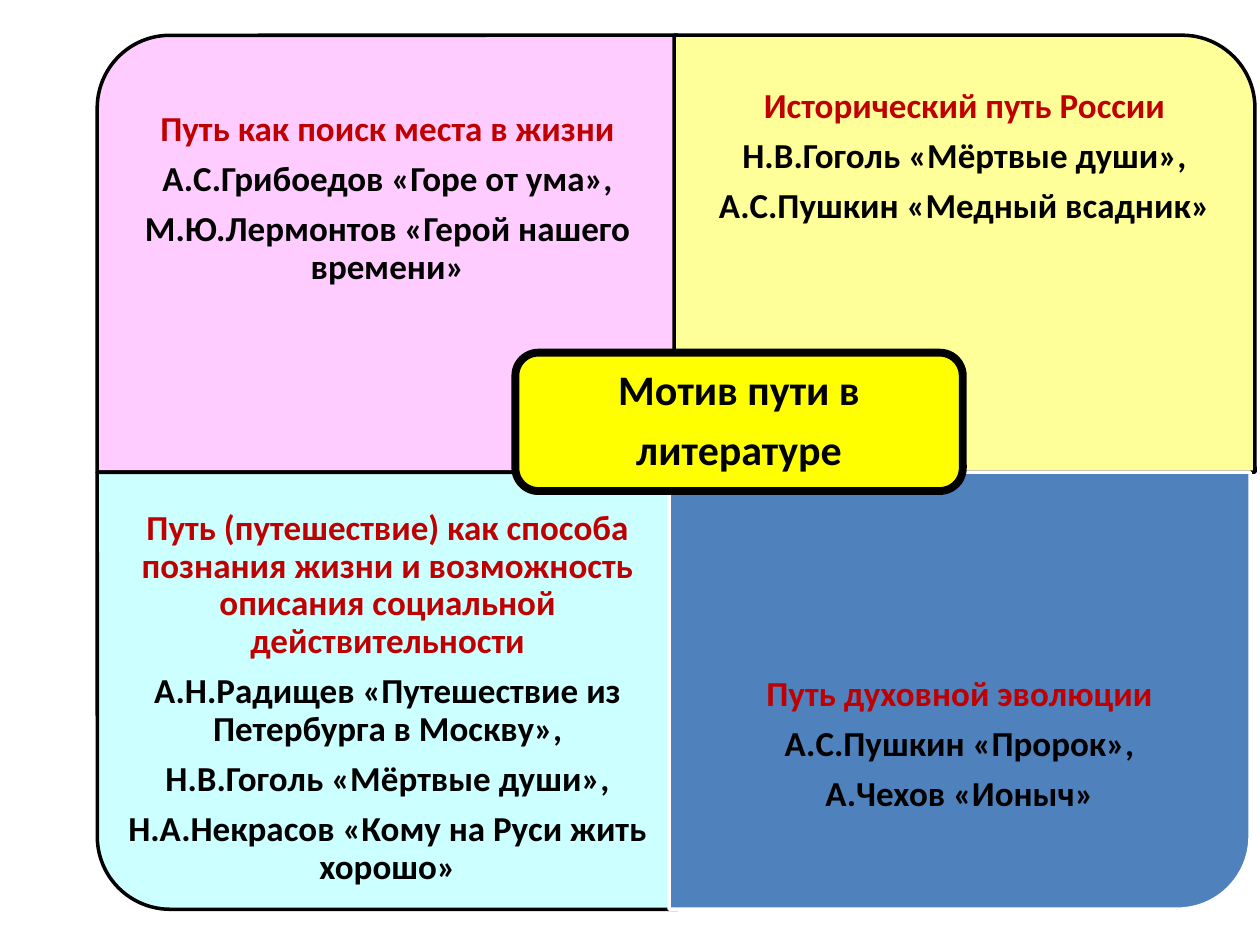
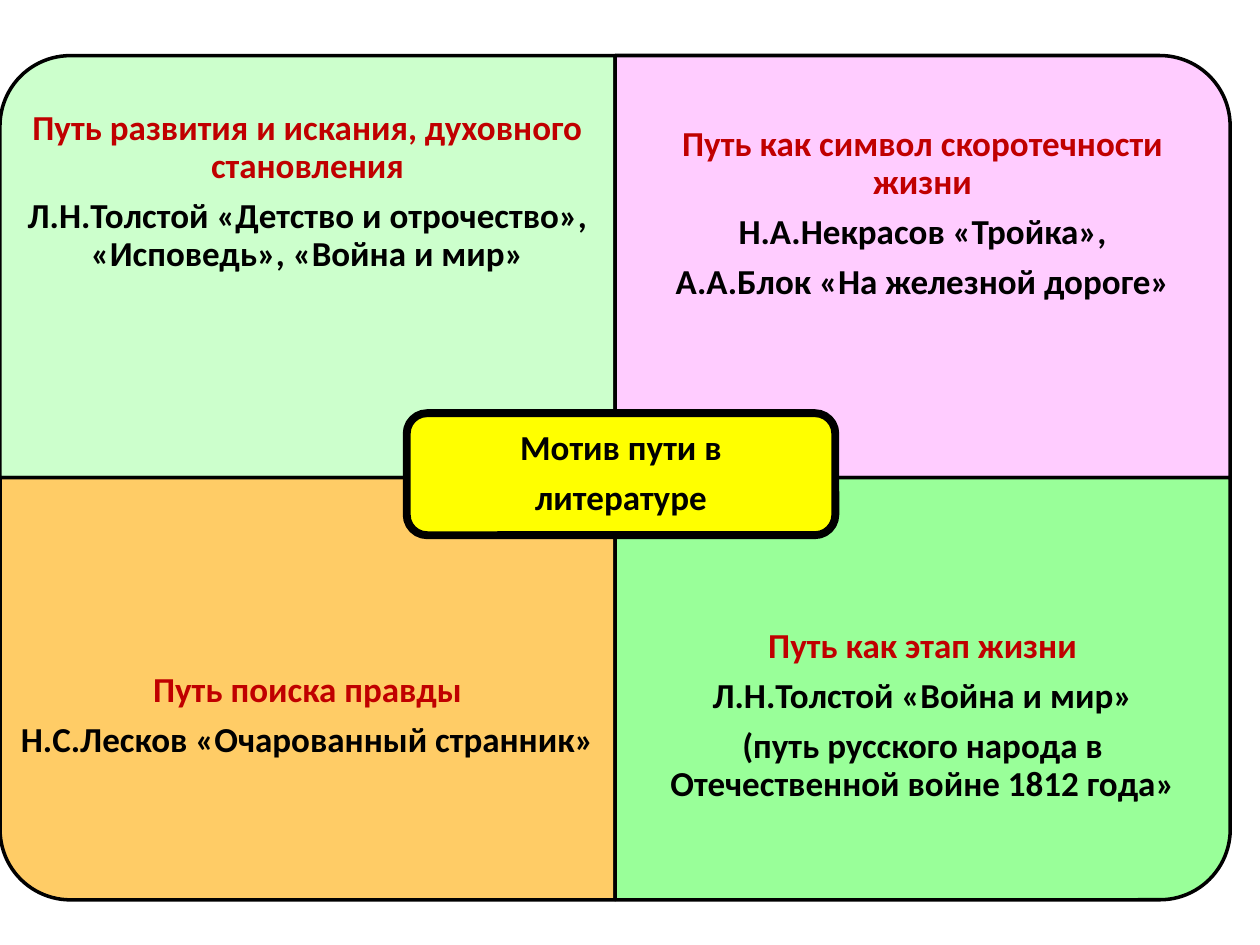
from dataclasses import dataclass

from pptx import Presentation
from pptx.dml.color import RGBColor
from pptx.enum.shapes import MSO_SHAPE as Preset
from pptx.enum.text import MSO_ANCHOR as Anchor, PP_ALIGN as Align
from pptx.shapes.autoshape import Shape
from pptx.slide import Slide
from pptx.text.text import TextFrame
from pptx.util import Cm, Pt

COLORS = {
    "black": "000000",
    "white": "FFFFFF",
    "heading": "C00000",
    "label": "FFFF00",
    "pink": "FFCCFF",
    "lemon": "FFFF99",
    "aqua": "CCFFFF",
    "blue": "4F81BD",
    "mint": "CCFFCC",
    "orange": "FFCC66",
    "green": "99FF99",
}
FONT = "Calibri"
PANEL_TEXT_SIZE = 20
PANEL_INSET = 0.41
TEXT_SHARE = 0.75
CORNER_ROTATIONS = (270, 0, 180, 90)
LABEL_LINES = ("Мотив пути в", "литературе")


@dataclass(frozen=True)
class Box:
    left: float
    top: float
    width: float
    height: float


@dataclass(frozen=True)
class Panel:
    fill: str
    heading: str
    works: tuple[str, ...]
    space_below: float = 0
    nudge: float = 0
    line: str = "black"


@dataclass(frozen=True)
class Matrix:
    first_cell: Box
    label: Box
    label_size: int
    panels: tuple[Panel, ...]


MATRICES = (
    Matrix(
        Box(1.96, 0.71, 11.71, 8.81),
        Box(10.39, 7.11, 9.02, 2.79),
        24,
        (
            Panel("pink", "Путь как поиск места в жизни",
                  ("А.С.Грибоедов «Горе от ума»,", "М.Ю.Лермонтов «Герой нашего времени»")),
            Panel("lemon", "Исторический путь России",
                  ("Н.В.Гоголь «Мёртвые души»,", "А.С.Пушкин «Медный всадник»"),
                  space_below=1.69, nudge=-0.08),
            Panel("aqua",
                  "Путь (путешествие) как способа познания жизни и возможность "
                  "описания социальной действительности",
                  ("А.Н.Радищев «Путешествие из Петербурга в Москву»,",
                   "Н.В.Гоголь «Мёртвые души»,",
                   "Н.А.Некрасов «Кому на Руси жить хорошо»"),
                  space_below=1.89),
            Panel("blue", "Путь духовной эволюции",
                  ("А.С.Пушкин «Пророк»,", "А.Чехов «Ионыч»"),
                  nudge=-0.18, line="white"),
        ),
    ),
    Matrix(
        Box(0, 1.12, 12.4, 8.51),
        Box(8.2, 8.33, 8.64, 2.46),
        20,
        (
            Panel("mint", "Путь развития и искания, духовного становления",
                  ("Л.Н.Толстой «Детство и отрочество», «Исповедь», «Война и мир»",),
                  space_below=0.87),
            Panel("pink", "Путь как символ скоротечности жизни",
                  ("Н.А.Некрасов «Тройка»,", "А.А.Блок «На железной дороге»")),
            Panel("orange", "Путь поиска правды",
                  ("Н.С.Лесков «Очарованный странник»",), space_below=1.02),
            Panel("green", "Путь как этап жизни",
                  ("Л.Н.Толстой «Война и мир»",
                   "(путь русского народа в Отечественной войне 1812 года»"),
                  space_below=1.02),
        ),
    ),
)


def color(name: str) -> RGBColor:
    """Look up a palette colour."""
    return RGBColor.from_string(COLORS[name])


def lengths(box: Box) -> tuple[Cm, Cm, Cm, Cm]:
    """Convert a box to slide lengths."""
    return Cm(box.left), Cm(box.top), Cm(box.width), Cm(box.height)


def add_filled_shape(slide: Slide, preset: Preset, box: Box, fill: str,
                     line: str, line_width: float) -> Shape:
    """Add an outlined shape without a shadow."""
    shape = slide.shapes.add_shape(preset, *lengths(box))
    shape.shadow.inherit = False
    shape.fill.solid()
    shape.fill.fore_color.rgb = color(fill)
    shape.line.color.rgb = color(line)
    shape.line.width = Pt(line_width)
    return shape


def write_lines(frame: TextFrame, lines: tuple[str, ...], size: int, inset: float,
                space_below: float = 0, first_color: str = "black") -> None:
    """Fill a frame with centred bold paragraphs."""
    frame.word_wrap = True
    frame.vertical_anchor = Anchor.MIDDLE
    frame.margin_left = frame.margin_right = frame.margin_top = Cm(inset)
    frame.margin_bottom = Cm(inset + space_below)
    for index, line in enumerate(lines):
        paragraph = frame.add_paragraph() if index else frame.paragraphs[0]
        paragraph.text = line
        paragraph.alignment = Align.CENTER
        paragraph.line_spacing = 0.9
        paragraph.space_after = Pt(0.35 * size)
        paragraph.font.name = FONT
        paragraph.font.size = Pt(size)
        paragraph.font.bold = True
        paragraph.font.color.rgb = color("black" if index else first_color)


def add_panel(slide: Slide, panel: Panel, cell: Box, rotation: int) -> None:
    """Draw a panel whose one rounded corner points outwards, with its text."""
    outline = cell
    if rotation % 180:
        shift = (cell.width - cell.height) / 2
        outline = Box(cell.left + shift, cell.top - shift, cell.height, cell.width)
    shape = add_filled_shape(slide, Preset.ROUND_1_RECTANGLE, outline,
                             panel.fill, panel.line, 2)
    shape.rotation = rotation

    text_height = cell.height * TEXT_SHARE
    in_lower_row = rotation in CORNER_ROTATIONS[2:]
    text_top = cell.top + (cell.height - text_height if in_lower_row else 0)
    text_box = slide.shapes.add_textbox(
        *lengths(Box(cell.left, text_top, cell.width, text_height)))
    write_lines(text_box.text_frame, (panel.heading, *panel.works), PANEL_TEXT_SIZE,
                PANEL_INSET, panel.space_below, "heading")


def add_matrix(slide: Slide, matrix: Matrix) -> None:
    """Draw four panels and the label over their centre."""
    first = matrix.first_cell
    for index, (panel, rotation) in enumerate(zip(matrix.panels, CORNER_ROTATIONS)):
        row, column = divmod(index, 2)
        cell = Box(first.left + column * first.width + panel.nudge,
                   first.top + row * first.height, first.width, first.height)
        add_panel(slide, panel, cell, rotation)
    label = add_filled_shape(slide, Preset.ROUNDED_RECTANGLE, matrix.label,
                             "label", "black", 4.5)
    write_lines(label.text_frame, LABEL_LINES, matrix.label_size, 0)


def main() -> None:
    """Build and save the presentation."""
    presentation = Presentation()
    presentation.slide_width = Cm(25.4)
    presentation.slide_height = Cm(19.05)
    for matrix in MATRICES:
        slide = presentation.slides.add_slide(presentation.slide_layouts[6])
        add_matrix(slide, matrix)
    presentation.save("out.pptx")


if __name__ == "__main__":
    main()
